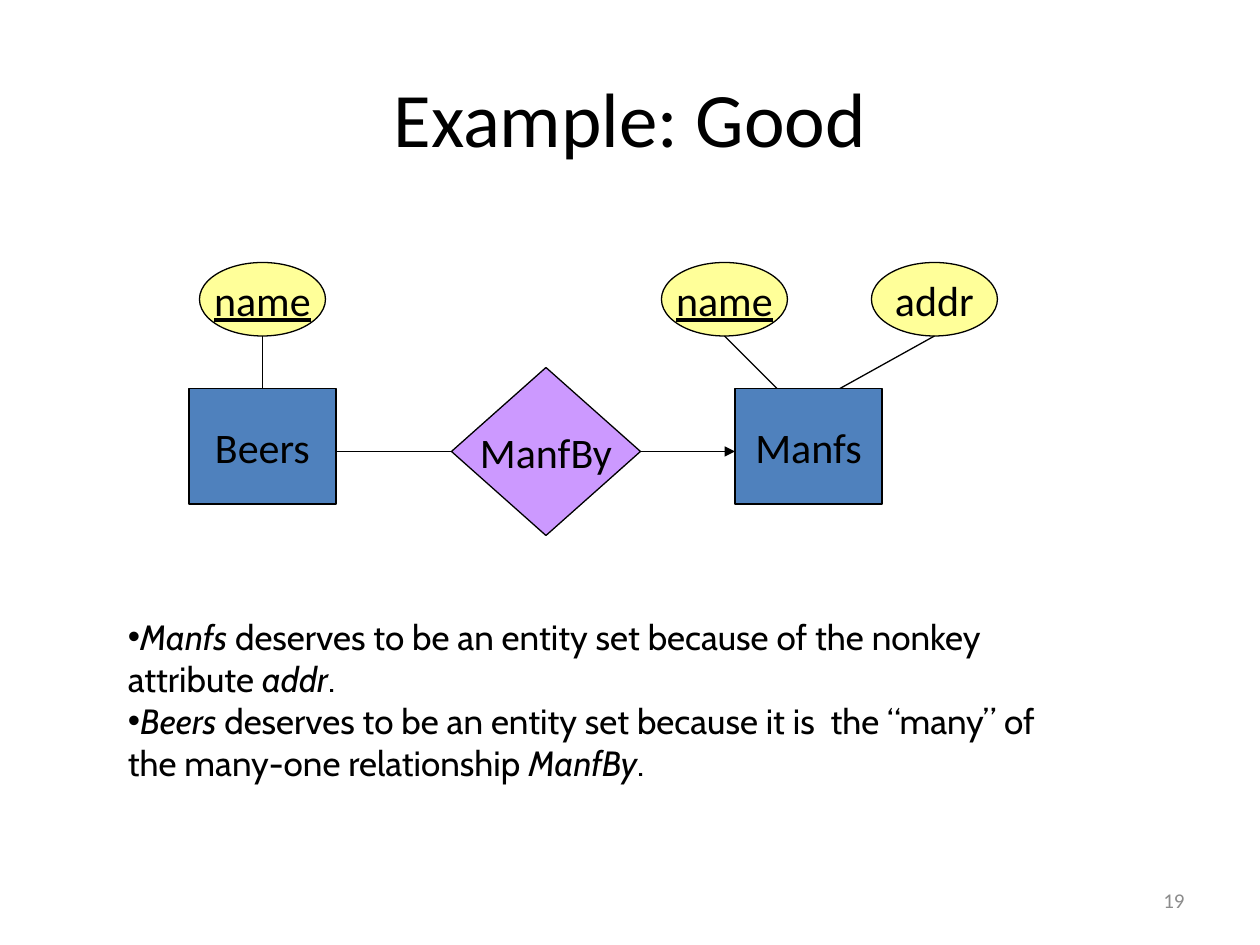
import pptx
import pptx.util
import pptx.dml.color
import pptx.enum.shapes
import pptx.enum.text
import pptx.oxml
import pptx.oxml.ns

PX = 9525
SHAPE = pptx.enum.shapes.MSO_SHAPE
ALIGN = pptx.enum.text.PP_ALIGN
MIDDLE = pptx.enum.text.MSO_ANCHOR.MIDDLE
BLACK, BLUE, YELLOW, PURPLE = "000000", "4F81BD", "FFFF99", "CC99FF"
AXIS_Y, ENTITY_TOP, ATTRIBUTE_BOTTOM = 344, 296, 256


def px(*lengths):
    return [pptx.util.Emu(n * PX) for n in lengths]


def color(value):
    return pptx.dml.color.RGBColor.from_string(value)


def add_xml(parent, tag, **attrs):
    child = pptx.oxml.parse_xml(f"<{tag} {pptx.oxml.ns.nsdecls('a')}/>")
    for key, value in attrs.items():
        child.set(key, value)
    parent.append(child)


def style_run(r, size, font="Calibri", fill=BLACK):
    r.font.size = pptx.util.Pt(size)
    r.font.name = font
    r.font.color.rgb = color(fill)


def set_text(sp, text, size, align=ALIGN.CENTER, fill=BLACK):
    tf = sp.text_frame
    tf.text = text
    tf.vertical_anchor = MIDDLE
    p = tf.paragraphs[0]
    p.alignment = align
    style_run(p.runs[0], size, fill=fill)
    return p.runs[0]


def add_node(slide, kind, box, fill, text, key=False):
    sp = slide.shapes.add_shape(kind, *px(*box))
    sp.shadow.inherit = False
    sp.fill.solid()
    sp.fill.fore_color.rgb = color(fill)
    sp.line.color.rgb = color(BLACK)
    sp.line.width = pptx.util.Pt(0.75)
    r = set_text(sp, text, 24)
    sp.text_frame.word_wrap = False
    if key:
        r.font.underline = True


def add_entity(slide, left, text):
    add_node(slide, SHAPE.RECTANGLE, (left, ENTITY_TOP, 112, 88), BLUE, text)


def add_attribute(slide, left, text, line_end, key=False):
    add_node(slide, SHAPE.OVAL, (left, 200, 96, 56), YELLOW, text, key)
    add_line(slide, left + 48, ATTRIBUTE_BOTTOM, line_end, ENTITY_TOP)


def add_line(slide, x1, y1, x2, y2, arrow=False):
    line = slide.shapes.add_connector(
        pptx.enum.shapes.MSO_CONNECTOR.STRAIGHT, *px(x1, y1, x2, y2))
    line.line.color.rgb = color(BLACK)
    line.line.width = pptx.util.Pt(0.75)
    if arrow:
        add_xml(line.line._get_or_add_ln(), "a:tailEnd", type="triangle")
    add_xml(line._element.spPr, "a:effectLst")


def add_bullets(slide, box, items):
    tf = slide.shapes.add_textbox(*px(*box)).text_frame
    tf.word_wrap = True
    for i, parts in enumerate(items):
        p = tf.add_paragraph() if i else tf.paragraphs[0]
        pPr = p._p.get_or_add_pPr()
        pPr.set("marL", "0")
        pPr.set("indent", "0")
        add_xml(pPr, "a:buFont", typeface="Arial")
        add_xml(pPr, "a:buChar", char="•")
        for n, text in enumerate(parts):
            r = p.add_run()
            r.text = text
            style_run(r, 20, "Cabin")
            r.font.italic = n % 2 == 0


def add_title(slide, text):
    title = slide.shapes.title
    title.left, title.top, title.width, title.height = px(48, 29, 864, 120)
    set_text(title, text, 44)


def add_page_number(slide, text):
    sp = slide.shapes.add_textbox(*px(688, 667, 224, 38))
    sp.text_frame.word_wrap = True
    set_text(sp, text, 12, ALIGN.RIGHT, "8C8C8C")


def main():
    prs = pptx.Presentation()
    prs.slide_width, prs.slide_height = px(960, 720)
    slide = prs.slides.add_slide(prs.slide_layouts[5])
    add_title(slide, "Example: Good")
    add_page_number(slide, "19")

    add_entity(slide, 144, "Beers")
    add_entity(slide, 560, "Manfs")
    add_node(slide, SHAPE.DIAMOND, (344, 280, 144, 128), PURPLE, "ManfBy")
    add_line(slide, 344, AXIS_Y, 256, AXIS_Y)
    add_line(slide, 488, AXIS_Y, 560, AXIS_Y, arrow=True)

    add_attribute(slide, 152, "name", 200, key=True)
    add_attribute(slide, 504, "name", 592, key=True)
    add_attribute(slide, 664, "addr", 640)

    add_bullets(slide, (88, 464, 722, 139), [
        ("Manfs", " deserves to be an entity set because of the nonkey attribute ",
         "addr", "."),
        ("Beers", " deserves to be an entity set because it is  the “many” of "
         "the many-one relationship ", "ManfBy", "."),
    ])
    prs.save("out.pptx")


if __name__ == "__main__":
    main()
